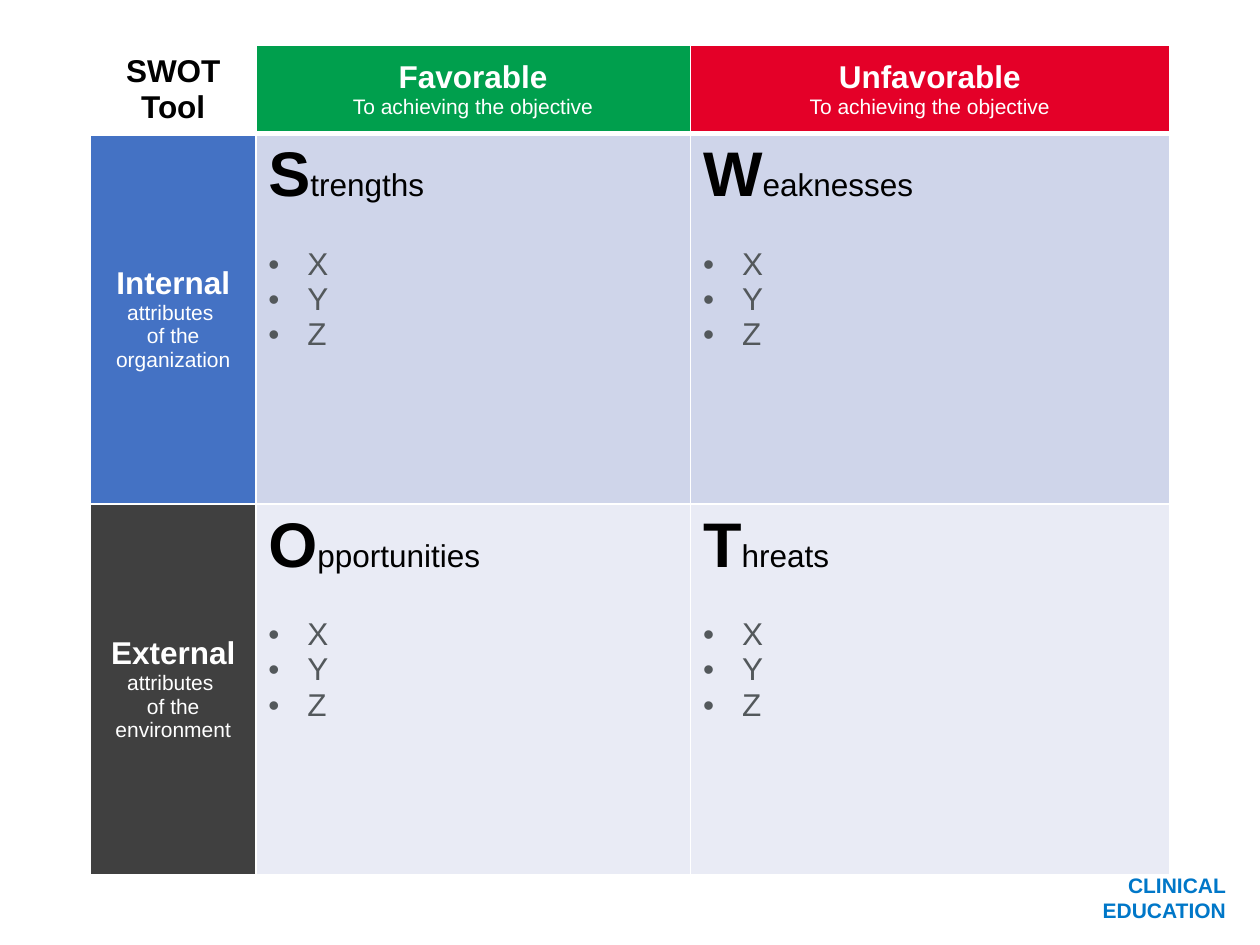
from typing import NamedTuple

from lxml import etree
from pptx import Presentation
from pptx.dml.color import RGBColor
from pptx.enum.text import MSO_ANCHOR, PP_ALIGN
from pptx.oxml.ns import qn
from pptx.util import Inches, Pt

LEFT, CENTER, RIGHT = PP_ALIGN.LEFT, PP_ALIGN.CENTER, PP_ALIGN.RIGHT
TOP, MIDDLE = MSO_ANCHOR.TOP, MSO_ANCHOR.MIDDLE

WIDTH, HEIGHT = 10, 7.5
COLS = (1.31, 3.45, 3.8)
ROWS = (0.68, 2.94, 2.94)
BLACK, WHITE, GREY = "000000", "FFFFFF", "53585B"
INDENT = 0.31
THIN, THICK = 1, 3


class Head(NamedTuple):
    row: int
    col: int
    title: str
    detail: str
    fill: str


class Part(NamedTuple):
    row: int
    col: int
    word: str
    fill: str


HEADS = (
    Head(0, 1, "Favorable", "To achieving the objective", "009F4D"),
    Head(0, 2, "Unfavorable", "To achieving the objective", "E40028"),
    Head(1, 0, "Internal", "attributes \nof the organization", "4472C4"),
    Head(2, 0, "External", "attributes \nof the environment", "404040"),
)
PARTS = (
    Part(1, 1, "Strengths", "CFD5EA"),
    Part(1, 2, "Weaknesses", "CFD5EA"),
    Part(2, 1, "Opportunities", "E9EBF5"),
    Part(2, 2, "Threats", "E9EBF5"),
)
ITEMS = ("X", "Y", "Z")


def paint(target, color: str) -> None:
    """Give a fill or a font one plain colour."""
    if hasattr(target, "solid"):
        target.solid()
        target.fore_color.rgb = RGBColor.from_string(color)
    else:
        target.color.rgb = RGBColor.from_string(color)


def write(para, text: str, size=18, color=BLACK, bold=False, align=LEFT) -> None:
    """Add text to a paragraph; a newline becomes a line break."""
    para.alignment = align
    for i, line in enumerate(text.split("\n")):
        if i:
            para.add_line_break()
        run = para.add_run()
        run.text = line
        run.font.name = "Arial"
        run.font.size = Pt(size)
        run.font.bold = bold
        paint(run.font, color)


def bullet(para) -> None:
    props = para._p.get_or_add_pPr()
    props.set("marL", str(Inches(INDENT)))
    props.set("indent", str(-Inches(INDENT)))
    font = etree.SubElement(props, qn("a:buFont"))
    font.set("typeface", "Arial")
    etree.SubElement(props, qn("a:buChar")).set("char", "•")


def border(cell, row: int) -> None:
    """Draw white edges, thick between the header row and the body."""
    props = cell._tc.get_or_add_tcPr()
    edges = {
        "lnL": THIN,
        "lnR": THIN,
        "lnT": THICK if row == 1 else THIN,
        "lnB": THICK if row == 0 else THIN,
    }
    for tag, width in edges.items():
        line = etree.SubElement(props, qn(f"a:{tag}"), w=str(Pt(width)))
        fill = etree.SubElement(line, qn("a:solidFill"))
        etree.SubElement(fill, qn("a:srgbClr"), val=WHITE)


def add_grid(slide):
    frame = slide.shapes.add_table(
        len(ROWS), len(COLS), Inches(0.72), Inches(0.36),
        Inches(sum(COLS)), Inches(sum(ROWS)))
    table = frame.table
    table.first_row = table.horz_banding = False
    for col, width in zip(table.columns, COLS):
        col.width = Inches(width)
    for r, height in enumerate(ROWS):
        table.rows[r].height = Inches(height)
        for c in range(len(COLS)):
            cell = table.cell(r, c)
            cell.vertical_anchor = TOP if r and c else MIDDLE
            border(cell, r)
    return table


def add_head(table, head: Head) -> None:
    cell = table.cell(head.row, head.col)
    paint(cell.fill, head.fill)
    frame = cell.text_frame
    write(frame.paragraphs[0], head.title, color=WHITE, bold=True, align=CENTER)
    write(frame.add_paragraph(), head.detail, size=12, color=WHITE, align=CENTER)


def add_part(table, part: Part) -> None:
    cell = table.cell(part.row, part.col)
    paint(cell.fill, part.fill)
    frame = cell.text_frame
    title = frame.paragraphs[0]
    write(title, part.word[0], size=36, bold=True)
    write(title, part.word[1:])
    title.space_after = Pt(20.7)
    for item in ITEMS:
        para = frame.add_paragraph()
        bullet(para)
        write(para, item, color=GREY)


def add_footer(slide) -> None:
    box = slide.shapes.add_textbox(
        Inches(5.12), Inches(6.92), Inches(4.61), Inches(0.41))
    frame = box.text_frame
    frame.word_wrap = True
    frame.vertical_anchor = MIDDLE
    frame.margin_left = frame.margin_right = 0
    frame.margin_top = frame.margin_bottom = 0
    for para, text in ((frame.paragraphs[0], "CLINICAL"),
                       (frame.add_paragraph(), "EDUCATION")):
        write(para, text, size=12, color="0077C8", bold=True, align=RIGHT)
        para.line_spacing = Pt(14.4)


def main() -> None:
    deck = Presentation()
    deck.slide_width, deck.slide_height = Inches(WIDTH), Inches(HEIGHT)
    slide = deck.slides.add_slide(deck.slide_layouts[6])
    add_footer(slide)
    table = add_grid(slide)
    corner = table.cell(0, 0)
    corner.fill.background()
    write(corner.text_frame.paragraphs[0], "SWOT Tool", bold=True, align=CENTER)
    for head in HEADS:
        add_head(table, head)
    for part in PARTS:
        add_part(table, part)
    deck.save("out.pptx")


if __name__ == "__main__":
    main()
